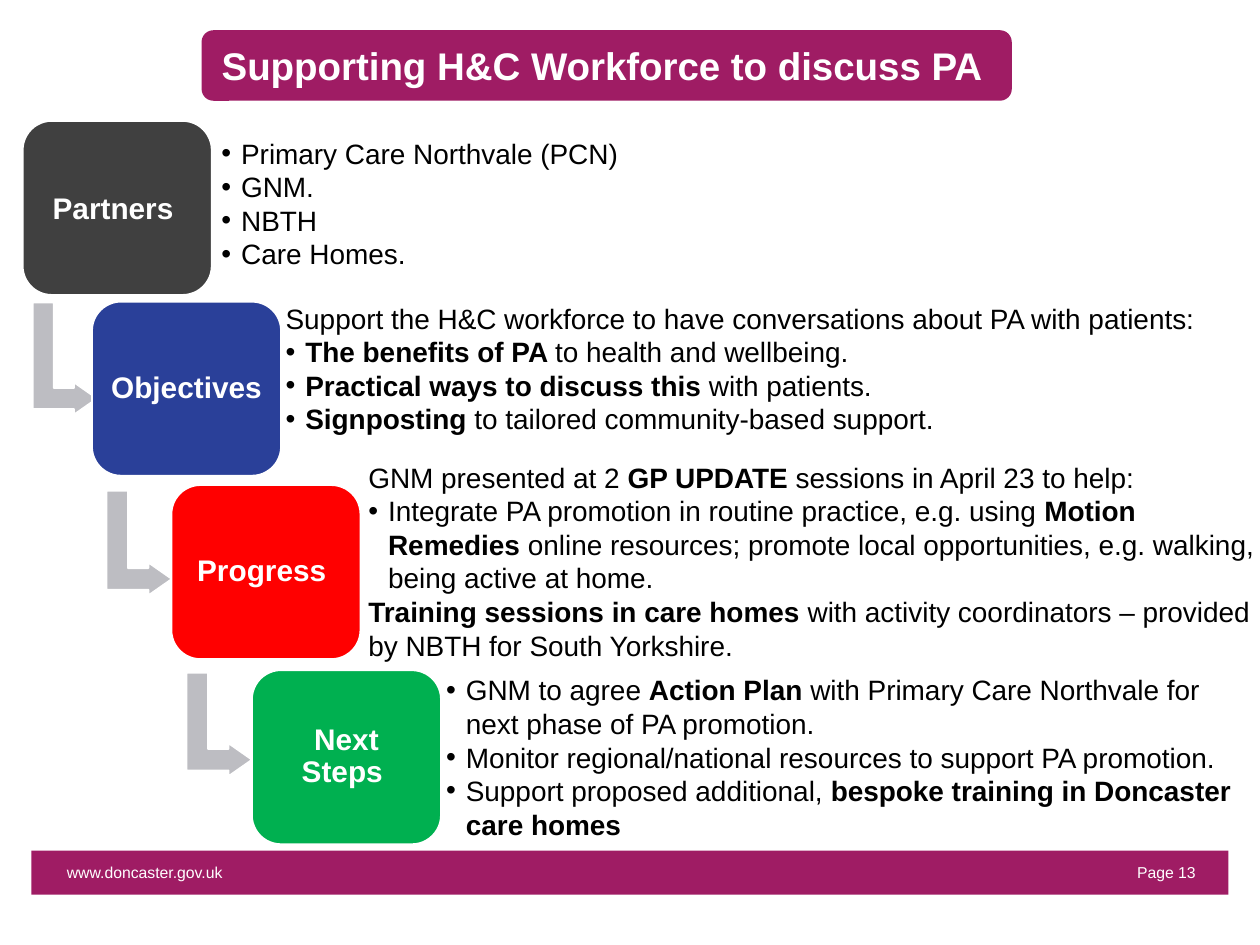
from lxml.etree import SubElement
from pptx import Presentation
from pptx.dml.color import RGBColor
from pptx.enum.shapes import MSO_SHAPE as Shape
from pptx.enum.text import MSO_ANCHOR as Anchor, MSO_AUTO_SIZE as AutoSize, PP_ALIGN as Align
from pptx.oxml.ns import qn
from pptx.util import Pt

WHITE = RGBColor(0xFF, 0xFF, 0xFF)
BLACK = RGBColor(0, 0, 0)
PLUM = RGBColor(0x9F, 0x1C, 0x64)
ARROW_GREY = RGBColor(0xBD, 0xBD, 0xC2)
CHARCOAL = RGBColor(0x40, 0x40, 0x40)
BLUE = RGBColor(0x2A, 0x40, 0x99)
RED = RGBColor(0xFF, 0, 0)
GREEN = RGBColor(0, 0xB0, 0x50)

STEP_WIDTH, STEP_HEIGHT = 108, 99.4
INDENT = 11.3

# Each step: label, colour, box corner, arrow box leading to it, and text box.
# In the text, ** switches bold on and off and a leading • makes a list item.
STEPS = [
    dict(label="Partners ", color=CHARCOAL, corner=(13, 69.1), arrow=None, label_spacing=1.0,
         detail_box=(115.2, 77.8, 581, 94.3), hang_left=2 * INDENT,
         detail=["•Primary Care Northvale (PCN)", "•GNM.", "•NBTH", "•Care Homes."]),
    dict(label="Objectives ", color=BLUE, corner=(52.6, 172.4), label_spacing=0.9,
         arrow=(18.7, 172.8, 36.7, 64.1),
         detail_box=(151.9, 172.1, 568.1, 97.9), hang_left=2 * INDENT,
         detail=["Support the H&C workforce to have conversations about PA with patients:",
                 "•**The benefits of PA **to health and wellbeing.",
                 "•**Practical ways to discuss this **with patients.",
                 "•**Signposting **to tailored community-based support."]),
    dict(label="Progress ", color=RED, corner=(98, 277.2), label_spacing=0.9,
         arrow=(60.8, 280.4, 37.4, 59.8),
         detail_box=(199.2, 263, 520.8, 97.9), hang_left=2 * INDENT,
         detail=["GNM presented at 2 **GP UPDATE **sessions in April 23 to help:",
                 "•Integrate PA promotion in routine practice, e.g. using **Motion Remedies "
                 "**online resources; promote local opportunities, e.g. walking, "
                 "being active at home.",
                 "**Training sessions in care homes **with activity coordinators – "
                 "provided by NBTH for South Yorkshire."]),
    dict(label="Next Steps ", color=GREEN, corner=(144, 383), label_spacing=0.9,
         arrow=(106.6, 384.5, 37.4, 59),
         detail_box=(254.9, 384.5, 461.5, 97.9), hang_left=INDENT,
         detail=["•GNM to agree **Action Plan **with Primary Care Northvale for "
                 "next phase of PA promotion.",
                 "•Monitor regional/national resources to support PA promotion.",
                 "•Support proposed additional, **bespoke training in Doncaster care homes**"]),
]


def place(shape, box):
    shape.left, shape.top, shape.width, shape.height = (Pt(length) for length in box)


def set_indent(paragraph, left, bulleted):
    properties = paragraph._p.get_or_add_pPr()
    properties.set("marL", str(Pt(left)))
    properties.set("indent", str(Pt(-INDENT) if bulleted else 0))
    if bulleted:
        SubElement(properties, qn("a:buFont"), typeface="Arial")
        SubElement(properties, qn("a:buChar"), char="•")
    else:
        SubElement(properties, qn("a:buNone"))


def write(shape, lines, size, color=WHITE, bold=False, align=Align.LEFT, anchor=Anchor.MIDDLE,
          inset=(0, 0), spacing=1.0, hang_left=None):
    """Fill a shape with lines; hang_left turns on list indents."""
    frame = shape.text_frame
    frame.word_wrap = True
    frame.auto_size = AutoSize.NONE
    frame.vertical_anchor = anchor
    frame.margin_left = frame.margin_right = Pt(inset[0])
    frame.margin_top = frame.margin_bottom = Pt(inset[1])
    for number, line in enumerate(lines):
        paragraph = frame.add_paragraph() if number else frame.paragraphs[0]
        bulleted = line.startswith("•")
        if hang_left is not None:
            set_indent(paragraph, hang_left if bulleted else INDENT, bulleted)
        paragraph.alignment = align
        paragraph.line_spacing = spacing
        paragraph.space_before = paragraph.space_after = Pt(0)
        for part, words in enumerate(line.removeprefix("•").split("**")):
            if words:
                run = paragraph.add_run()
                run.text = words
                run.font.name = "Arial"
                run.font.size = Pt(size)
                run.font.color.rgb = color
                run.font.bold = bold or part % 2 == 1


def add_block(slide, kind, box, color, outlined=False):
    block = slide.shapes.add_shape(kind, *(Pt(length) for length in box))
    block.shadow.inherit = False
    block.fill.solid()
    block.fill.fore_color.rgb = color
    if outlined:
        block.line.color.rgb = WHITE
        block.line.width = Pt(1)
    else:
        block.line.fill.background()
    return block


def add_title(slide, box):
    """Set the title on a rounded banner that lies behind it."""
    title = slide.shapes.title
    banner = add_block(slide, Shape.ROUNDED_RECTANGLE, box, PLUM)
    title._element.addprevious(banner._element)
    place(title, box)
    write(title, ["Supporting H&C Workforce to discuss PA "], 22, bold=True,
          align=Align.CENTER, inset=(7.2, 3.6))


def add_arrow(slide, box):
    """Draw a down-then-right arrow that fills the box after a quarter turn."""
    left, top, width, height = box
    shift = (height - width) / 2
    arrow = add_block(slide, Shape.BENT_UP_ARROW, (left - shift, top + shift, height, width),
                      ARROW_GREY, outlined=True)
    arrow.rotation = 90
    for index, value in enumerate((0.328, 0.25, 0.358)):
        arrow.adjustments[index] = value


def add_step(slide, body, step):
    if step["arrow"]:
        add_arrow(slide, step["arrow"])
    block = add_block(slide, Shape.ROUNDED_RECTANGLE,
                      (*step["corner"], STEP_WIDTH, STEP_HEIGHT), step["color"], outlined=True)
    write(block, [step["label"]], 17, bold=True, align=Align.CENTER, inset=(5.5, 5),
          spacing=step["label_spacing"])
    place(body, step["detail_box"])
    write(body, step["detail"], 16, color=BLACK, anchor=Anchor.TOP, hang_left=step["hang_left"])


def add_footer(slide, box):
    left, top, width, height = box
    add_block(slide, Shape.RECTANGLE, box, PLUM)
    address_box = (left + 20.2, top + 8.6, 101, 8)
    page_box = (left + width - 180.7, top + 4.3, 162, 16)
    for text, text_box, align in (("www.doncaster.gov.uk", address_box, Align.LEFT),
                                  ("Page 13", page_box, Align.RIGHT)):
        label = slide.shapes.add_textbox(*(Pt(length) for length in text_box))
        write(label, [text], 9, align=align)


def main():
    deck = Presentation()
    deck.slide_width, deck.slide_height = Pt(720), Pt(540)
    slide = deck.slides.add_slide(deck.slide_layouts.get_by_name("Comparison"))
    title, *bodies = slide.placeholders
    add_footer(slide, (18, 486, 684, 25.2))
    add_title(slide, (115.2, 17.3, 463, 40.3))
    for body, step in zip(bodies, STEPS):
        add_step(slide, body, step)
    deck.save("out.pptx")


if __name__ == "__main__":
    main()
